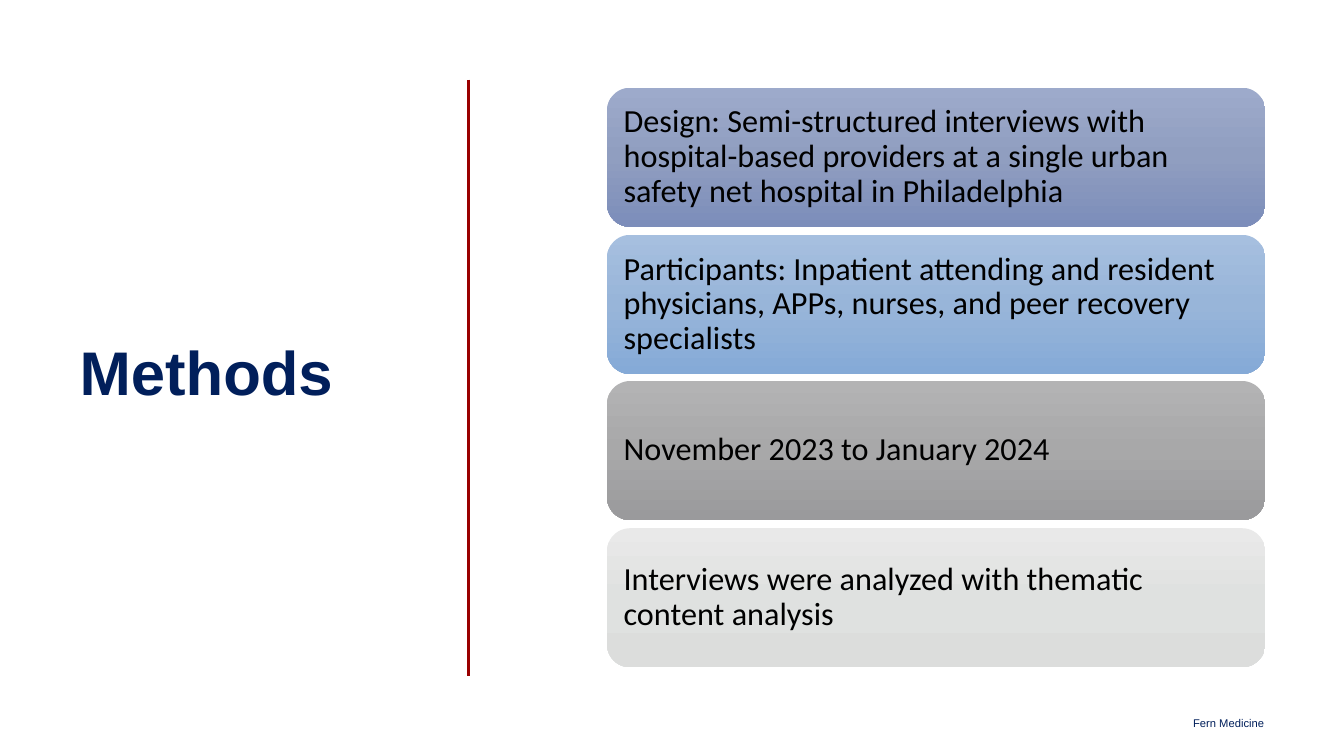
from copy import deepcopy
from dataclasses import dataclass

from pptx import Presentation
from pptx.dml.color import RGBColor
from pptx.enum.shapes import MSO_CONNECTOR, MSO_SHAPE
from pptx.enum.text import MSO_ANCHOR, PP_ALIGN
from pptx.oxml.ns import qn
from pptx.shapes.autoshape import Shape
from pptx.slide import Slide
from pptx.util import Emu, Pt

EMU_PER_PX = 9144


@dataclass(frozen=True)
class Theme:
    navy: str = "011F5B"
    red: str = "990000"
    black: str = "000000"
    heading_font: str = "Arial"
    body_font: str = "Calibri"
    title_size: int = 44
    card_size: int = 23
    footer_size: int = 8
    rule_width: int = 2


@dataclass(frozen=True)
class Box:
    left: int
    top: int
    width: int
    height: int


@dataclass(frozen=True)
class TextStyle:
    font: str
    size: int
    color: str
    anchor: MSO_ANCHOR
    bold: bool = False
    align: PP_ALIGN = PP_ALIGN.LEFT
    spacing: float = 1.0
    inset: int = 0


@dataclass(frozen=True)
class MethodCard:
    text: str
    gradient: tuple[str, str, str]


THEME = Theme()
TITLE_STYLE = TextStyle(THEME.heading_font, THEME.title_size, THEME.navy,
                        MSO_ANCHOR.MIDDLE, bold=True, spacing=0.8)
CARD_STYLE = TextStyle(THEME.body_font, THEME.card_size, THEME.black,
                       MSO_ANCHOR.MIDDLE, spacing=0.9, inset=10)
FOOTER_STYLE = TextStyle(THEME.heading_font, THEME.footer_size, THEME.navy,
                         MSO_ANCHOR.BOTTOM, align=PP_ALIGN.RIGHT)

TITLE_BOX = Box(79, 79, 366, 592)
FOOTER_BOX = Box(990, 704, 264, 20)
CARD_STACK = Box(602, 87, 653, 575)
CARD_HEIGHT = 138
RULE_X = 465

METHODS = (
    MethodCard("Design: Semi-structured interviews with hospital-based providers "
               "at a single urban safety net hospital in Philadelphia",
               ("9DAACB", "909EC0", "7C8DBA")),
    MethodCard("Participants: Inpatient attending and resident physicians, APPs, "
               "nurses, and peer recovery specialists",
               ("A6BFDF", "98B5D9", "85AAD7")),
    MethodCard("November 2023 to January 2024", ("B3B3B4", "A8A8A9", "9A9A9C")),
    MethodCard("Interviews were analyzed with thematic content analysis",
               ("E9E9E9", "DFE1E0", "DCDDDC")),
)


def px(length: float) -> Emu:
    return Emu(round(length) * EMU_PER_PX)


def place(box: Box) -> tuple[Emu, Emu, Emu, Emu]:
    return px(box.left), px(box.top), px(box.width), px(box.height)


def apply_format(target: object, values: dict[str, object]) -> None:
    for attribute, value in values.items():
        setattr(target, attribute, value)


def write_text(holder: Shape, text: str, style: TextStyle) -> None:
    frame = holder.text_frame
    inset = px(style.inset)
    apply_format(frame, {
        "word_wrap": True, "vertical_anchor": style.anchor,
        "margin_left": inset, "margin_right": inset,
        "margin_top": inset, "margin_bottom": inset,
    })
    paragraph = frame.paragraphs[0]
    apply_format(paragraph, {"alignment": style.align, "line_spacing": style.spacing})
    run = paragraph.add_run()
    run.text = text
    apply_format(run.font, {"name": style.font, "size": Pt(style.size), "bold": style.bold})
    run.font.color.rgb = RGBColor.from_string(style.color)


def add_label(slide: Slide, box: Box, text: str, style: TextStyle) -> None:
    write_text(slide.shapes.add_textbox(*place(box)), text, style)


def add_rule(slide: Slide) -> None:
    rule = slide.shapes.add_connector(
        MSO_CONNECTOR.STRAIGHT, px(RULE_X), px(TITLE_BOX.top),
        px(RULE_X), px(TITLE_BOX.top + TITLE_BOX.height))
    rule.line.color.rgb = RGBColor.from_string(THEME.red)
    rule.line.width = Pt(THEME.rule_width)
    properties = rule._element.spPr
    properties.append(properties.makeelement(qn("a:effectLst"), {}))


def fill_gradient(card: Shape, colors: tuple[str, str, str]) -> None:
    card.fill.gradient()
    card.fill.gradient_angle = 270
    stop_list = card._element.spPr.find(".//" + qn("a:gsLst"))
    stop_list.append(deepcopy(stop_list[0]))
    for index, (stop, color) in enumerate(zip(card.fill.gradient_stops, colors)):
        stop.position = index / (len(colors) - 1)
        stop.color.rgb = RGBColor.from_string(color)


def add_method_card(slide: Slide, box: Box, method: MethodCard) -> None:
    card = slide.shapes.add_shape(MSO_SHAPE.ROUNDED_RECTANGLE, *place(box))
    card.shadow.inherit = False
    card.line.fill.background()
    fill_gradient(card, method.gradient)
    write_text(card, method.text, CARD_STYLE)


def main() -> None:
    presentation = Presentation()
    apply_format(presentation, {"slide_width": px(1333), "slide_height": px(750)})
    slide = presentation.slides.add_slide(presentation.slide_layouts[6])
    add_label(slide, FOOTER_BOX, "Fern Medicine", FOOTER_STYLE)
    add_rule(slide)
    add_label(slide, TITLE_BOX, "Methods", TITLE_STYLE)
    pitch = (CARD_STACK.height - CARD_HEIGHT) / (len(METHODS) - 1)
    for index, method in enumerate(METHODS):
        top = round(CARD_STACK.top + index * pitch)
        add_method_card(slide, Box(CARD_STACK.left, top, CARD_STACK.width, CARD_HEIGHT), method)
    presentation.save("out.pptx")


if __name__ == "__main__":
    main()
